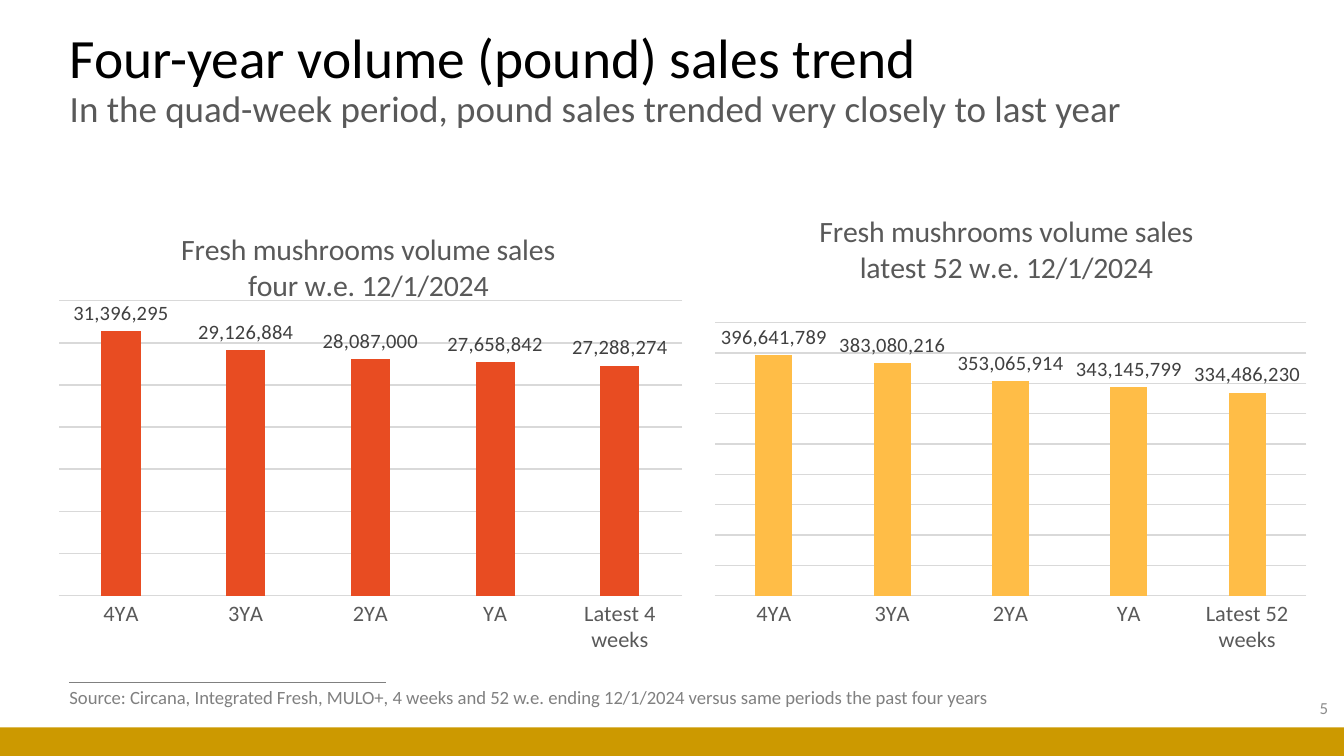
"""Build the four-year mushroom volume sales slide."""
from dataclasses import dataclass
from typing import NamedTuple

from lxml.etree import SubElement
from pptx import Presentation
from pptx.chart.chart import Chart
from pptx.chart.data import CategoryChartData
from pptx.dml.color import RGBColor
from pptx.enum.chart import XL_CHART_TYPE, XL_LABEL_POSITION, XL_TICK_MARK
from pptx.enum.shapes import MSO_CONNECTOR, MSO_SHAPE
from pptx.enum.text import MSO_ANCHOR, MSO_AUTO_SIZE, PP_ALIGN
from pptx.oxml.ns import qn
from pptx.slide import Slide
from pptx.util import Pt

EMU_PER_PX = 5715
PAGE_WIDTH, PAGE_HEIGHT = 1600, 900


@dataclass(frozen=True)
class Theme:
    """Colours and type sizes used on the slide."""

    font: str = "Calibri"
    black: str = "000000"
    muted: str = "595959"
    label: str = "404040"
    source: str = "808080"
    number: str = "8C8C8C"
    grid: str = "D9D9D9"
    band: str = "CC9900"
    red: str = "E84C22"
    amber: str = "FFBD47"
    title_size: float = 29.7
    subtitle_size: float = 19.8
    chart_title_size: float = 16
    axis_size: float = 12
    label_size: float = 11
    source_size: float = 10
    number_size: float = 9


THEME = Theme()


class Area(NamedTuple):
    """A rectangle in px."""

    left: int
    top: int
    width: int
    height: int

    def emu(self) -> list[int]:
        """Return the four lengths in EMU."""
        return [px(length) for length in self]


class SalesChart(NamedTuple):
    """One column chart of sales volume."""

    area: Area
    title: tuple[str, str]
    latest: str
    volumes: tuple[int, ...]
    color: str
    maximum: int
    step: int
    title_layout: dict[str, float]
    plot_layout: dict[str, float]


CHARTS = (
    SalesChart(
        Area(69, 248, 744, 530),
        ("Fresh mushrooms volume sales", "four w.e. 12/1/2024"),
        "Latest 4 weeks",
        (31396295, 29126884, 28087000, 27658842, 27288274),
        THEME.red, 35_000_000, 5_000_000,
        {"x": 0.19, "y": 0.04},
        {"x": 0, "y": 0.21, "w": 1, "h": 0.67},
    ),
    SalesChart(
        Area(850, 248, 706, 530),
        ("Fresh mushrooms volume sales", "latest 52 w.e. 12/1/2024"),
        "Latest 52 weeks",
        (396641789, 383080216, 353065914, 343145799, 334486230),
        THEME.amber, 450_000_000, 50_000_000,
        {"x": 0.17, "y": 0},
        {"x": 0, "y": 0.26, "w": 1, "h": 0.62},
    ),
)


def px(length: int) -> int:
    """Turn px into EMU."""
    return length * EMU_PER_PX


def style_font(font, size: float, color: str) -> None:
    """Set the theme face with a size and colour."""
    font.name = THEME.font
    font.size = Pt(size)
    font.bold = False
    font.color.rgb = RGBColor.from_string(color)


def style_line(line, color: str, width: float) -> None:
    """Set the colour and width of a line."""
    line.color.rgb = RGBColor.from_string(color)
    line.width = Pt(width)


def set_layout(parent, index: int, values: dict[str, float], inner: bool = False) -> None:
    """Give a chart part a manual layout."""
    for old in parent.findall(qn("c:layout")):
        parent.remove(old)
    layout = SubElement(parent, qn("c:layout"))
    parent.insert(index, layout)
    manual = SubElement(layout, qn("c:manualLayout"))
    if inner:
        SubElement(manual, qn("c:layoutTarget"), val="inner")
    for key in ("x", "y"):
        SubElement(manual, qn(f"c:{key}Mode"), val="edge")
    for key, value in values.items():
        SubElement(manual, qn(f"c:{key}"), val=str(value))


def add_title(page: Slide) -> None:
    """Fill the title placeholder with the heading and its subtitle."""
    title = page.shapes.title
    title.left, title.top, title.width, title.height = Area(67, 33, 1376, 126).emu()
    frame = title.text_frame
    frame.auto_size = MSO_AUTO_SIZE.NONE
    frame.vertical_anchor = MSO_ANCHOR.MIDDLE
    para = frame.paragraphs[0]
    para.alignment = PP_ALIGN.LEFT
    para.line_spacing = 0.9
    heading = para.add_run()
    heading.text = "Four-year volume (pound) sales trend"
    style_font(heading.font, THEME.title_size, THEME.black)
    para.add_line_break()
    subtitle = para.add_run()
    subtitle.text = "In the quad-week period, pound sales trended very closely to last year"
    style_font(subtitle.font, THEME.subtitle_size, THEME.muted)


def add_text(page: Slide, area: Area, text: str, size: float, color: str,
             align: PP_ALIGN = PP_ALIGN.LEFT, anchor: MSO_ANCHOR = MSO_ANCHOR.TOP,
             wrap: bool = True) -> None:
    """Add a one-paragraph text box."""
    box = page.shapes.add_textbox(*area.emu())
    frame = box.text_frame
    frame.word_wrap = wrap
    frame.auto_size = MSO_AUTO_SIZE.NONE if wrap else MSO_AUTO_SIZE.SHAPE_TO_FIT_TEXT
    frame.vertical_anchor = anchor
    para = frame.paragraphs[0]
    para.text = text
    para.alignment = align
    style_font(para.font, size, color)


def add_footer(page: Slide) -> None:
    """Add the source rule, the colour band, the source and the page number."""
    rule = page.shapes.add_connector(
        MSO_CONNECTOR.STRAIGHT, px(82), px(812), px(459), px(812))
    style_line(rule.line, THEME.source, 0.5)
    SubElement(rule._element.spPr, qn("a:effectLst"))
    band = page.shapes.add_shape(
        MSO_SHAPE.RECTANGLE, *Area(0, 866, PAGE_WIDTH, PAGE_HEIGHT - 866).emu())
    band.shadow.inherit = False
    band.fill.solid()
    band.fill.fore_color.rgb = RGBColor.from_string(THEME.band)
    band.line.fill.background()
    add_text(page, Area(1237, 819, 360, 48), "5", THEME.number_size, THEME.number,
             PP_ALIGN.RIGHT, MSO_ANCHOR.MIDDLE)
    add_text(page, Area(67, 809, 1136, 43),
             "Source: Circana, Integrated Fresh, MULO+, 4 weeks and 52 w.e. ending "
             "12/1/2024 versus same periods the past four years",
             THEME.source_size, THEME.source, wrap=False)


def style_axes(chart: Chart, sales: SalesChart) -> None:
    """Format the category axis, the hidden value axis and its grid."""
    categories, values = chart.category_axis, chart.value_axis
    categories.major_tick_mark = XL_TICK_MARK.NONE
    style_font(categories.tick_labels.font, THEME.axis_size, THEME.muted)
    style_line(categories.format.line, THEME.grid, 0.75)
    values.visible = False
    values.minimum_scale, values.maximum_scale = 0, sales.maximum
    values.major_unit = sales.step
    style_line(values.major_gridlines.format.line, THEME.grid, 0.75)


def add_sales_chart(page: Slide, sales: SalesChart) -> None:
    """Add one titled column chart with value labels."""
    data = CategoryChartData(number_format="#,##0")
    data.categories = ["4YA", "3YA", "2YA", "YA", sales.latest]
    data.add_series("Series 1", sales.volumes)
    chart = page.shapes.add_chart(
        XL_CHART_TYPE.COLUMN_CLUSTERED, *sales.area.emu(), data).chart
    style_font(chart.font, THEME.source_size, THEME.black)
    chart.has_legend = False
    frame = chart.chart_title.text_frame
    frame.text = "\n".join(sales.title)
    for para in frame.paragraphs:
        style_font(para.font, THEME.chart_title_size, THEME.muted)
    set_layout(chart.chart_title._element, 1, sales.title_layout)
    set_layout(chart._chartSpace.chart.plotArea, 0, sales.plot_layout, inner=True)
    style_axes(chart, sales)
    plot = chart.plots[0]
    plot.vary_by_categories = False
    plot.gap_width, plot.overlap = 219, -27
    series = plot.series[0]
    series.format.fill.solid()
    series.format.fill.fore_color.rgb = RGBColor.from_string(sales.color)
    labels = series.data_labels
    labels.show_value = True
    labels.position = XL_LABEL_POSITION.OUTSIDE_END
    labels.number_format, labels.number_format_is_linked = "#,##0", False
    style_font(labels.font, THEME.label_size, THEME.label)


def main() -> None:
    """Build and save the deck."""
    deck = Presentation()
    deck.slide_width, deck.slide_height = px(PAGE_WIDTH), px(PAGE_HEIGHT)
    page = deck.slides.add_slide(deck.slide_layouts.get_by_name("Title Only"))
    add_title(page)
    add_footer(page)
    for sales in CHARTS:
        add_sales_chart(page, sales)
    deck.save("out.pptx")


if __name__ == "__main__":
    main()
